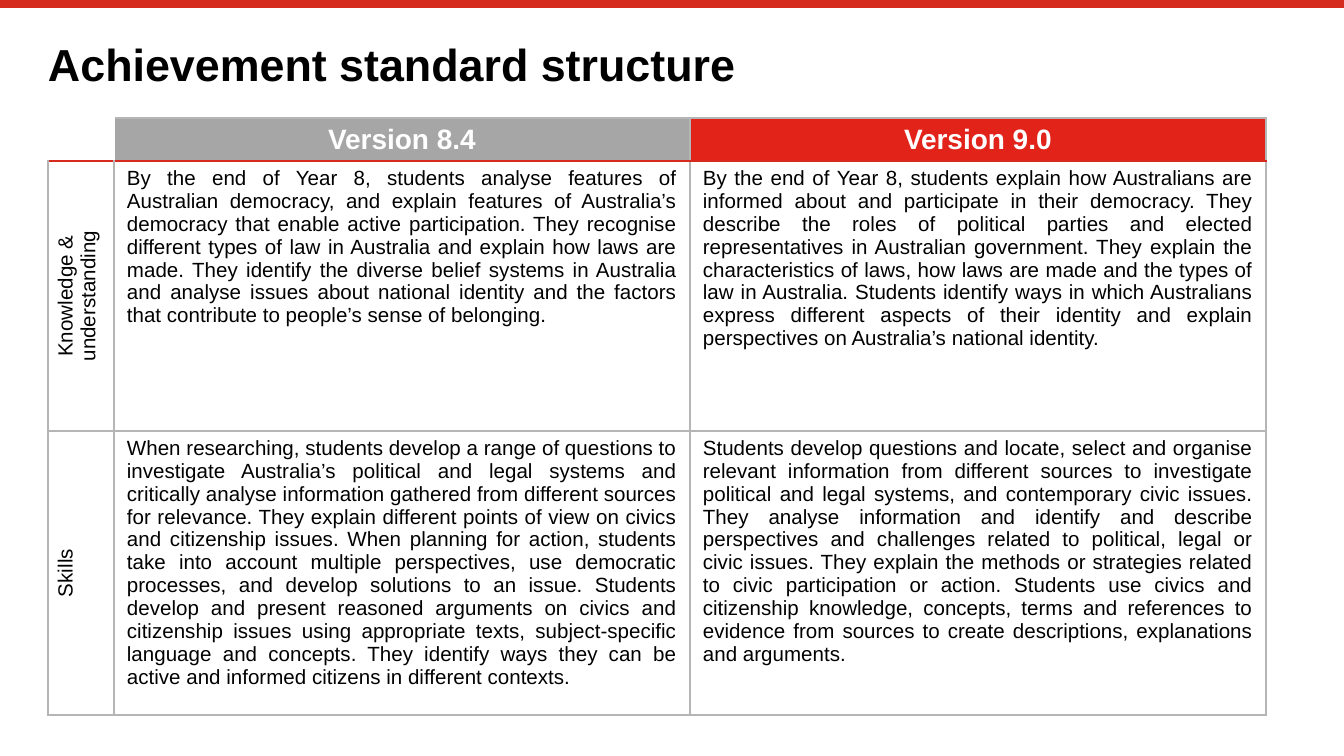
from lxml.etree import SubElement
from pptx import Presentation
from pptx.dml.color import RGBColor
from pptx.enum.shapes import MSO_CONNECTOR
from pptx.enum.text import MSO_ANCHOR, MSO_AUTO_SIZE, PP_ALIGN
from pptx.oxml.ns import qn
from pptx.util import Pt

EMU_PER_PX = 914400 / 134.4
RED, HEADER_RED = "D52B1E", "E2231A"
GREY, HEADER_GREY = "B5B5B5", "A6A6A6"
WHITE, BLACK = "FFFFFF", "000000"

COLUMN_WIDTHS = [66, 576, 576]
ROW_HEIGHTS = [43, 268, 284]
HEADERS = [("", WHITE), ("Version 8.4", HEADER_GREY), ("Version 9.0", HEADER_RED)]
STANDARDS = [
    (
        "Knowledge & understanding",
        "By the end of Year 8, students analyse features of Australian democracy, "
        "and explain features of Australia’s democracy that enable active "
        "participation. They recognise different types of law in Australia and "
        "explain how laws are made. They identify the diverse belief systems in "
        "Australia and analyse issues about national identity and the factors that "
        "contribute to people’s sense of belonging.",
        "By the end of Year 8, students explain how Australians are informed about "
        "and participate in their democracy. They describe the roles of political "
        "parties and elected representatives in Australian government. They explain "
        "the characteristics of laws, how laws are made and the types of law in "
        "Australia. Students identify ways in which Australians express different "
        "aspects of their identity and explain perspectives on Australia’s national "
        "identity.",
    ),
    (
        "Skills",
        "When researching, students develop a range of questions to investigate "
        "Australia’s political and legal systems and critically analyse information "
        "gathered from different sources for relevance. They explain different "
        "points of view on civics and citizenship issues. When planning for action, "
        "students take into account multiple perspectives, use democratic processes, "
        "and develop solutions to an issue. Students develop and present reasoned "
        "arguments on civics and citizenship issues using appropriate texts, "
        "subject-specific language and concepts. They identify ways they can be "
        "active and informed citizens in different contexts.",
        "Students develop questions and locate, select and organise relevant "
        "information from different sources to investigate political and legal "
        "systems, and contemporary civic issues. They analyse information and "
        "identify and describe perspectives and challenges related to political, "
        "legal or civic issues. They explain the methods or strategies related to "
        "civic participation or action. Students use civics and citizenship "
        "knowledge, concepts, terms and references to evidence from sources to "
        "create descriptions, explanations and arguments.",
    ),
]


def px(length):
    return round(length * EMU_PER_PX)


def color(value):
    return RGBColor.from_string(value)


class SlideBuilder:
    def __init__(self, page, font="Arial"):
        self.page = page
        self.font = font

    def style(self, paragraph, size, fill, bold=False, align=PP_ALIGN.LEFT):
        paragraph.alignment = align
        font = paragraph.font
        font.name, font.size, font.bold = self.font, Pt(size), bold
        font.color.rgb = color(fill)

    def title(self, text, left, top, width, height):
        box = self.page.shapes.title
        box.left, box.top, box.width, box.height = map(px, (left, top, width, height))
        frame = box.text_frame
        frame.text = text
        frame.word_wrap = True
        frame.auto_size = MSO_AUTO_SIZE.NONE
        frame.vertical_anchor = MSO_ANCHOR.MIDDLE
        frame.margin_left = frame.margin_right = 0
        frame.margin_top = frame.margin_bottom = 0
        paragraph = frame.paragraphs[0]
        paragraph.line_spacing = 0.9
        self.style(paragraph, 24, BLACK, bold=True)

    def line(self, x1, y1, x2, y2, fill, width):
        line = self.page.shapes.add_connector(
            MSO_CONNECTOR.STRAIGHT, px(x1), px(y1), px(x2), px(y2))
        line.line.color.rgb = color(fill)
        line.line.width = Pt(width)
        SubElement(line._element.spPr, qn("a:effectLst"))

    def table(self, left, top, widths, heights):
        frame = self.page.shapes.add_table(
            len(heights), len(widths), px(left), px(top), px(sum(widths)), px(sum(heights)))
        table = frame.table
        table.first_row = table.horz_banding = False
        for column, width in zip(table.columns, widths):
            column.width = px(width)
        for row, height in zip(table.rows, heights):
            row.height = px(height)
        return table

    def cell(self, cell, text, fill, borders, size=11, ink=BLACK, bold=False,
             align=PP_ALIGN.JUSTIFY, upright=False):
        """Fill one cell; borders maps sides L, R, T, B to (colour, points)."""
        cell.margin_left = cell.margin_right = px(13)
        cell.margin_top = cell.margin_bottom = px(6)
        cell.text = text
        self.style(cell.text_frame.paragraphs[0], size, ink, bold, align)
        cell.fill.solid()
        cell.fill.fore_color.rgb = color(fill)
        properties = cell._tc.get_or_add_tcPr()
        if upright:
            cell.vertical_anchor = MSO_ANCHOR.MIDDLE
            properties.set("vert", "vert270")
        for index, side in enumerate(side for side in "LRTB" if side in borders):
            ink, width = borders[side]
            edge = SubElement(properties, qn(f"a:ln{side}"), w=str(Pt(width)))
            SubElement(SubElement(edge, qn("a:solidFill")), qn("a:srgbClr"), val=ink)
            properties.insert(index, edge)


def main():
    deck = Presentation()
    deck.slide_width, deck.slide_height = px(1344), px(756)
    page = deck.slides.add_slide(deck.slide_layouts[5])
    builder = SlideBuilder(page)
    builder.line(0, 4, 1344, 4, RED, 4.2)
    builder.title("Achievement standard structure", 48, 40, 1249, 53)

    table = builder.table(48, 118, COLUMN_WIDTHS, ROW_HEIGHTS)
    thin, accent = (GREY, 1), (RED, 1.5)
    for column, (text, fill) in enumerate(HEADERS):
        borders = {"B": accent}
        if text:
            borders.update(T=thin, R=thin)
        if column == 2:
            borders["L"] = thin
        builder.cell(table.cell(0, column), text, fill, borders, size=15,
                     ink=WHITE, bold=True, align=PP_ALIGN.CENTER)
    for row, texts in enumerate(STANDARDS, start=1):
        borders = dict.fromkeys("LRTB", thin)
        if row == 1:
            borders["T"] = accent
        for column, text in enumerate(texts):
            label = column == 0
            builder.cell(table.cell(row, column), text, WHITE, borders, upright=label,
                         align=PP_ALIGN.CENTER if label else PP_ALIGN.JUSTIFY)
    deck.save("out.pptx")


if __name__ == "__main__":
    main()
